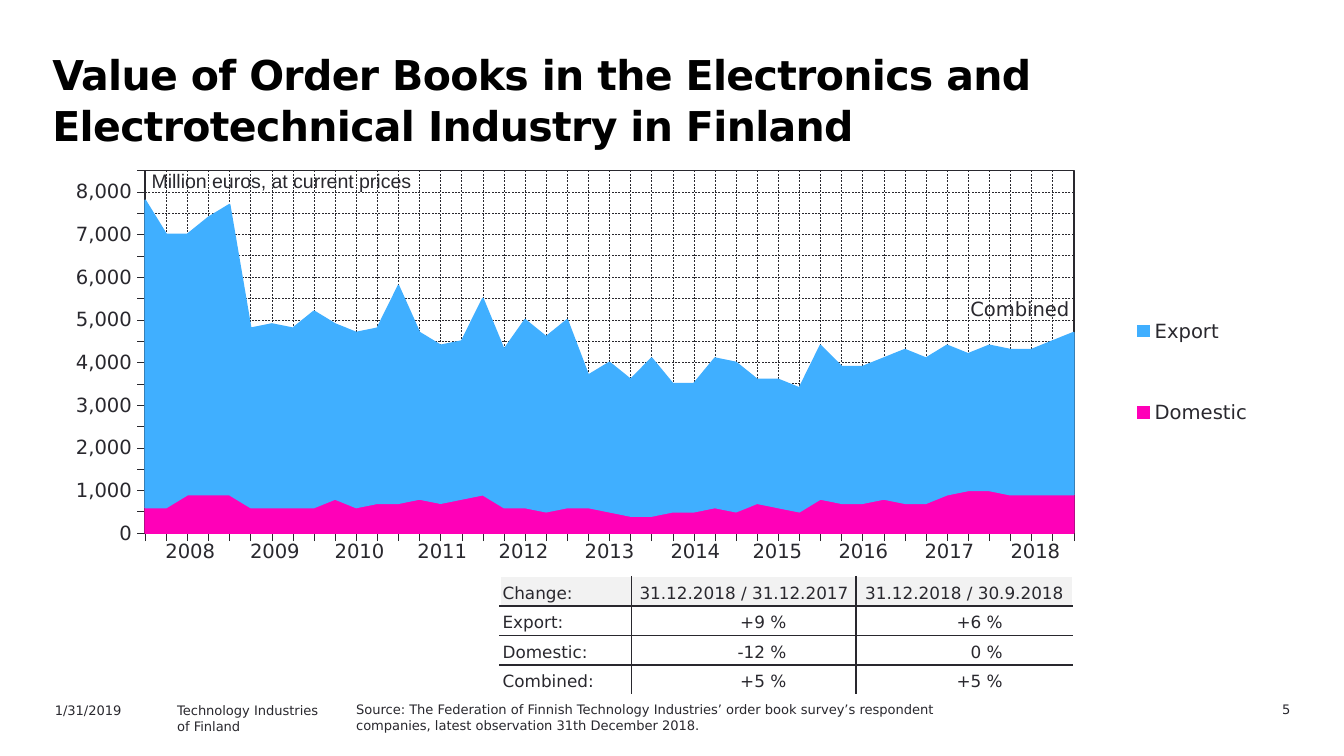
from lxml.etree import SubElement
from pptx import Presentation
from pptx.chart.data import CategoryChartData
from pptx.dml.color import RGBColor
from pptx.enum.chart import XL_CHART_TYPE, XL_LEGEND_POSITION, XL_TICK_LABEL_POSITION, XL_TICK_MARK
from pptx.enum.dml import MSO_LINE
from pptx.enum.text import MSO_ANCHOR, MSO_AUTO_SIZE, PP_ALIGN
from pptx.oxml import parse_xml
from pptx.oxml.ns import nsdecls, qn
from pptx.util import Inches, Pt

INK, WHITE, HEADER = "29282E", "FFFFFF", "F2F2F2"
SANS = "DejaVu Sans"
DOMESTIC = [600, 600, 900, 900, 900, 600, 600, 600, 600, 800, 600, 700, 700, 800, 700,
            800, 900, 600, 600, 500, 600, 600, 500, 400, 400, 500, 500, 600, 500, 700,
            600, 500, 800, 700, 700, 800, 700, 700, 900, 1000, 1000, 900, 900, 900, 900]
EXPORT = [7200, 6400, 6100, 6500, 6800, 4200, 4300, 4200, 4600, 4100, 4100, 4100, 5100, 3900, 3700,
          3700, 4600, 3700, 4400, 4100, 4400, 3100, 3500, 3200, 3700, 3000, 3000, 3500, 3500, 2900,
          3000, 2900, 3600, 3200, 3200, 3300, 3600, 3400, 3500, 3200, 3400, 3400, 3400, 3600, 3800]
SERIES = {"Domestic": (DOMESTIC, "FF00B8"), "Export": (EXPORT, "40AFFF")}
CHANGES = [
    ["Change:", "31.12.2018 / 31.12.2017", "31.12.2018 / 30.9.2018"],
    ["Export:", "+9 %", "+6 %"],
    ["Domestic:", "-12 %", "0 %"],
    ["Combined:", "+5 %", "+5 %"],
]
YEAR_WIDTHS = [0.63, 0.63, 0.63, 0.6, 0.61, 0.67, 0.61, 0.61, 0.67, 0.61, 0.67]


def color(value):
    return RGBColor.from_string(value)


def apply(target, values):
    for name, value in values.items():
        setattr(target, name, value)


def style_font(font, size, name=SANS, ink=INK, bold=False):
    apply(font, {"size": Pt(size), "name": name, "bold": bold})
    font.color.rgb = color(ink)


def set_margins(target, left, top, right, bottom):
    apply(target, {"margin_left": Inches(left), "margin_top": Inches(top),
                   "margin_right": Inches(right), "margin_bottom": Inches(bottom)})


def place(shape, left, top, width, height):
    apply(shape, {"left": Inches(left), "top": Inches(top),
                  "width": Inches(width), "height": Inches(height)})


def fill_frame(frame, lines, size, name=SANS, align=PP_ALIGN.LEFT, wrap=True):
    apply(frame, {"word_wrap": wrap, "auto_size": MSO_AUTO_SIZE.NONE,
                  "vertical_anchor": MSO_ANCHOR.TOP})
    frame.text = "\n".join(lines)
    for para in frame.paragraphs:
        para.alignment = align
        for span in para.runs:
            style_font(span.font, size, name)


def add_label(page, bounds, lines, size=7, **options):
    box = page.shapes.add_textbox(*map(Inches, bounds))
    fill_frame(box.text_frame, lines, size, **options)
    return box


def add_title(page, text):
    title = page.shapes.title
    place(title, 0.28, 0.31, 8.74, 0.71)
    fill_frame(title.text_frame, [text], 22)
    set_margins(title.text_frame, 0.11, 0.05, 0.1, 0.05)
    para = title.text_frame.paragraphs[0]
    apply(para, {"line_spacing": Pt(27), "space_before": Pt(0)})
    span = para.runs[0]
    style_font(span.font, 22, ink="000000", bold=True)
    span.font._element.set("spc", "-33")


def add_source(page, text):
    source = page.placeholders[1]
    place(source, 2.55, 5.17, 5.07, 0.18)
    fill_frame(source.text_frame, [text], 7)
    set_margins(source.text_frame, 0.1, 0.05, 0.3, 0.05)
    para = source.text_frame.paragraphs[0]
    para.space_before = Pt(0)
    properties = para._p.get_or_add_pPr()
    properties.set("marL", "0")
    properties.set("indent", "0")
    SubElement(properties, qn("a:buNone"))


def style_line(line, width, dash=None):
    line.color.rgb = color(INK)
    apply(line, {"width": Pt(width), "dash_style": dash})


def style_axis(axis):
    apply(axis, {"has_major_gridlines": True, "major_tick_mark": XL_TICK_MARK.OUTSIDE,
                 "minor_tick_mark": XL_TICK_MARK.NONE})
    style_line(axis.format.line, 0.22)
    style_line(axis.major_gridlines.format.line, 0.25, MSO_LINE.DASH)
    style_font(axis.tick_labels.font, 10.5)


def manual_layout(x, y, width, height, inner=False):
    target = '<c:layoutTarget val="inner"/>' if inner else ""
    return parse_xml(
        f'<c:layout {nsdecls("c")}><c:manualLayout>{target}'
        '<c:xMode val="edge"/><c:yMode val="edge"/>'
        f'<c:x val="{x}"/><c:y val="{y}"/><c:w val="{width}"/><c:h val="{height}"/>'
        '</c:manualLayout></c:layout>')


def set_layout(parent, layout, position):
    for old in parent.findall(qn("c:layout")):
        parent.remove(old)
    parent.insert(position, layout)


def add_order_chart(page):
    data = CategoryChartData(number_format="#,##0")
    data.categories = [str(quarter + 1) for quarter in range(len(EXPORT))]
    for name, (values, _) in SERIES.items():
        data.add_series(name, values)
    bounds = map(Inches, (0.39, 1.18, 9.2, 3.05))
    chart = page.shapes.add_chart(XL_CHART_TYPE.AREA_STACKED, *bounds, data).chart
    apply(chart, {"has_title": False, "has_legend": True})
    style_font(chart.font, 10.5)
    for series in chart.plots[0].series:
        ink = color(SERIES[series.name][1])
        series.format.fill.solid()
        series.format.fill.fore_color.rgb = ink
        series.format.line.color.rgb = ink
        series.format.line.width = Pt(0.88)
    style_axis(chart.category_axis)
    style_axis(chart.value_axis)
    chart.category_axis.tick_label_position = XL_TICK_LABEL_POSITION.NONE
    apply(chart.value_axis, {"minimum_scale": 0, "maximum_scale": 8500, "major_unit": 500})
    apply(chart.value_axis.tick_labels, {"number_format": "#,##0", "number_format_is_linked": False})
    chart.value_axis._element.find(qn("c:crossBetween")).set("val", "midCat")
    apply(chart.legend, {"position": XL_LEGEND_POSITION.RIGHT, "include_in_layout": False})
    style_font(chart.legend.font, 10.5)
    set_layout(chart.legend._element, manual_layout(0.857, 0.25, 0.13, 0.54), 1)
    plot_area = chart._chartSpace.chart.plotArea
    set_layout(plot_area, manual_layout(0.075, 0.029, 0.751, 0.885, inner=True), 0)
    plot_area.append(parse_xml(
        f'<c:spPr {nsdecls("c", "a")}><a:noFill/><a:ln w="12700"><a:solidFill>'
        f'<a:srgbClr val="{INK}"/></a:solidFill></a:ln></c:spPr>'))


def set_borders(cell, inks):
    for side, ink in zip("LRTB", inks):
        line = SubElement(cell._tc.get_or_add_tcPr(), qn(f"a:ln{side}"), w="12700")
        if ink:
            SubElement(SubElement(line, qn("a:solidFill")), qn("a:srgbClr"), val=ink)
        else:
            SubElement(line, qn("a:noFill"))


def add_grid(page, left, top, widths, row_height, rows):
    bounds = map(Inches, (left, top, sum(widths), row_height * len(rows)))
    table = page.shapes.add_table(len(rows), len(widths), *bounds).table
    apply(table, {"first_row": False, "horz_banding": False})
    for column, width in zip(table.columns, widths):
        column.width = Inches(width)
    for row in table.rows:
        row.height = Inches(row_height)
    return table


def fill_cell(cell, text, size, align, borders, fill=None):
    cell.text = text
    para = cell.text_frame.paragraphs[0]
    para.alignment = align
    style_font(para.runs[0].font, size)
    set_borders(cell, borders)
    if fill:
        cell.fill.solid()
        cell.fill.fore_color.rgb = color(fill)
    else:
        cell.fill.background()


def add_change_table(page):
    table = add_grid(page, 3.72, 4.29, [0.98, 1.67, 1.61], 0.22, CHANGES)
    for r, texts in enumerate(CHANGES):
        for c, text in enumerate(texts):
            cell = table.cell(r, c)
            edges = (c == 0, c == 2, r == 0, r == 3)
            borders = [WHITE if edge else INK for edge in edges]
            value_align = PP_ALIGN.RIGHT if r else PP_ALIGN.CENTER
            fill_cell(cell, text, 9, value_align if c else PP_ALIGN.LEFT, borders, None if r else HEADER)
            set_margins(cell, 0.02, 0.02, 0.52 if r and c else 0.02, 0.02)
            cell.vertical_anchor = MSO_ANCHOR.BOTTOM


def add_year_table(page):
    years = [str(2008 + index) for index in range(len(YEAR_WIDTHS))]
    table = add_grid(page, 1.1, 3.97, YEAR_WIDTHS, 0.32, [years])
    for cell, year in zip(table.iter_cells(), years):
        fill_cell(cell, year, 10.5, PP_ALIGN.CENTER, [None] * 4)


def main():
    deck = Presentation()
    width = Inches(10)
    apply(deck, {"slide_width": width, "slide_height": width * 9 // 16})
    page = deck.slides.add_slide(deck.slide_layouts[1])
    add_title(page, "Value of Order Books in the Electronics and Electrotechnical Industry in Finland")
    add_label(page, (8.76, 5.17, 0.94, 0.18), ["5"], align=PP_ALIGN.RIGHT)
    add_order_chart(page)
    add_label(page, (1.03, 1.21, 2.21, 0.27), ["Million euros, at current prices"], 10.5,
              name="Arial", wrap=False)
    add_change_table(page)
    combined = add_label(page, (7.13, 2.17, 1.06, 0.27), ["Combined"], 10.5)
    set_margins(combined.text_frame, 0.09, 0.04, 0.09, 0.04)
    add_year_table(page)
    add_label(page, (0.31, 5.18, 1, 0.18), ["1/31/2019"])
    add_label(page, (1.22, 5.18, 1.8, 0.18), ["Technology Industries", "of Finland"])
    add_source(page, "Source: The Federation of Finnish Technology Industries’ order book survey’s "
                     "respondent companies, latest observation 31th December 2018.")
    deck.save("out.pptx")


if __name__ == "__main__":
    main()
